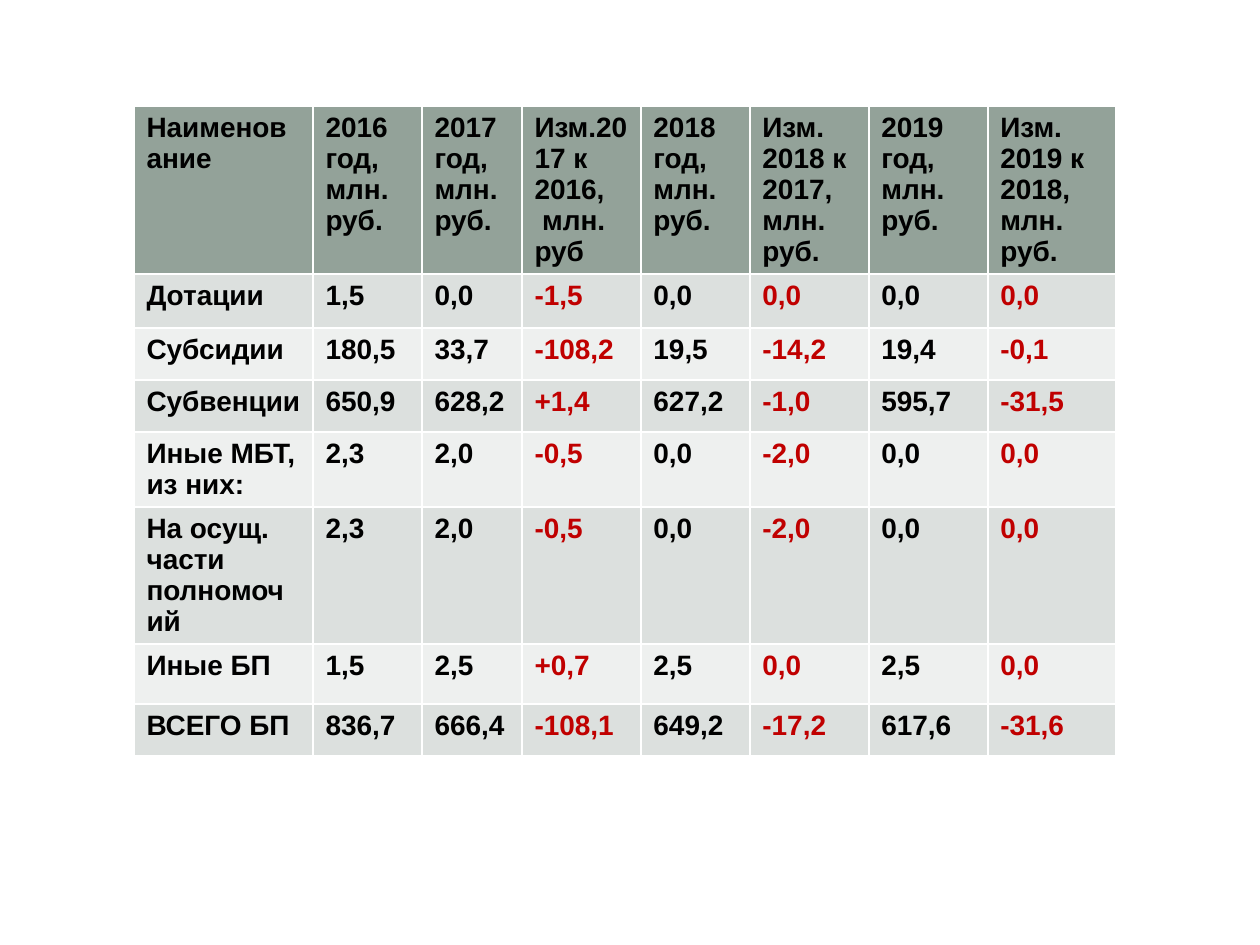
from dataclasses import dataclass

from pptx import Presentation
from pptx.dml.color import RGBColor
from pptx.util import Emu, Pt

PX = 914400 // 126
BLANK_LAYOUT = 6

TABLE_BOX = (134, 106, 982, 704)
COLUMN_WIDTHS = (179, 109, 100, 119, 109, 119, 119, 128)
ROW_HEIGHTS = (52, 54, 52, 52, 52, 52, 60, 52)
CHANGE_COLUMNS = (3, 5, 7)

ROWS = (
    ("Наименование", "2016 год, млн. руб.", "2017 год, млн. руб.",
     "Изм.2017 к 2016,\n млн. руб", "2018 год, млн. руб.",
     "Изм. 2018 к 2017, млн. руб.", "2019 год, млн. руб.",
     "Изм. 2019 к 2018, млн. руб."),
    ("Дотации", "1,5", "0,0", "-1,5", "0,0", "0,0", "0,0", "0,0"),
    ("Субсидии", "180,5", "33,7", "-108,2", "19,5", "-14,2", "19,4", "-0,1"),
    ("Субвенции", "650,9", "628,2", "+1,4", "627,2", "-1,0", "595,7", "-31,5"),
    ("Иные МБТ,\nиз них:", "2,3", "2,0", "-0,5", "0,0", "-2,0", "0,0", "0,0"),
    ("На осущ. части полномочий", "2,3", "2,0", "-0,5", "0,0", "-2,0", "0,0", "0,0"),
    ("Иные БП", "1,5", "2,5", "+0,7", "2,5", "0,0", "2,5", "0,0"),
    ("ВСЕГО БП", "836,7", "666,4", "-108,1", "649,2", "-17,2", "617,6", "-31,6"),
)


@dataclass(frozen=True)
class Theme:
    font: str = "Arial"
    size: int = 16
    text: str = "000000"
    change: str = "C00000"
    header: str = "93A299"
    bands: tuple = ("DCE0DE", "EEF0EF")


THEME = Theme()


def px(n):
    return Emu(n * PX)


def write_text(tf, text, *, color=THEME.text, size=THEME.size, bold=True):
    """Put each line of the text in its own paragraph."""
    for i, line in enumerate(text.split("\n")):
        p = tf.add_paragraph() if i else tf.paragraphs[0]
        r = p.add_run()
        r.text = line
        r.font.name = THEME.font
        r.font.size = Pt(size)
        r.font.bold = bold
        r.font.color.rgb = RGBColor.from_string(color)


def fill_cell(cell, color):
    cell.fill.solid()
    cell.fill.fore_color.rgb = RGBColor.from_string(color)


def add_transfers_table(s):
    """The default table style supplies the white rules between cells."""
    frame = s.shapes.add_table(len(ROWS), len(COLUMN_WIDTHS), *map(px, TABLE_BOX))
    table = frame.table
    for column, width in zip(table.columns, COLUMN_WIDTHS):
        column.width = px(width)
    for row, height in zip(table.rows, ROW_HEIGHTS):
        row.height = px(height)
    frame.height = px(TABLE_BOX[3])

    for i, values in enumerate(ROWS):
        fill = THEME.bands[(i - 1) % 2] if i else THEME.header
        for j, value in enumerate(values):
            cell = table.cell(i, j)
            fill_cell(cell, fill)
            is_change = i > 0 and j in CHANGE_COLUMNS
            write_text(cell.text_frame, value,
                       color=THEME.change if is_change else THEME.text)


def main():
    prs = Presentation()
    prs.slide_width, prs.slide_height = px(1260), px(945)
    s = prs.slides.add_slide(prs.slide_layouts[BLANK_LAYOUT])
    add_transfers_table(s)
    prs.save("out.pptx")


if __name__ == "__main__":
    main()
